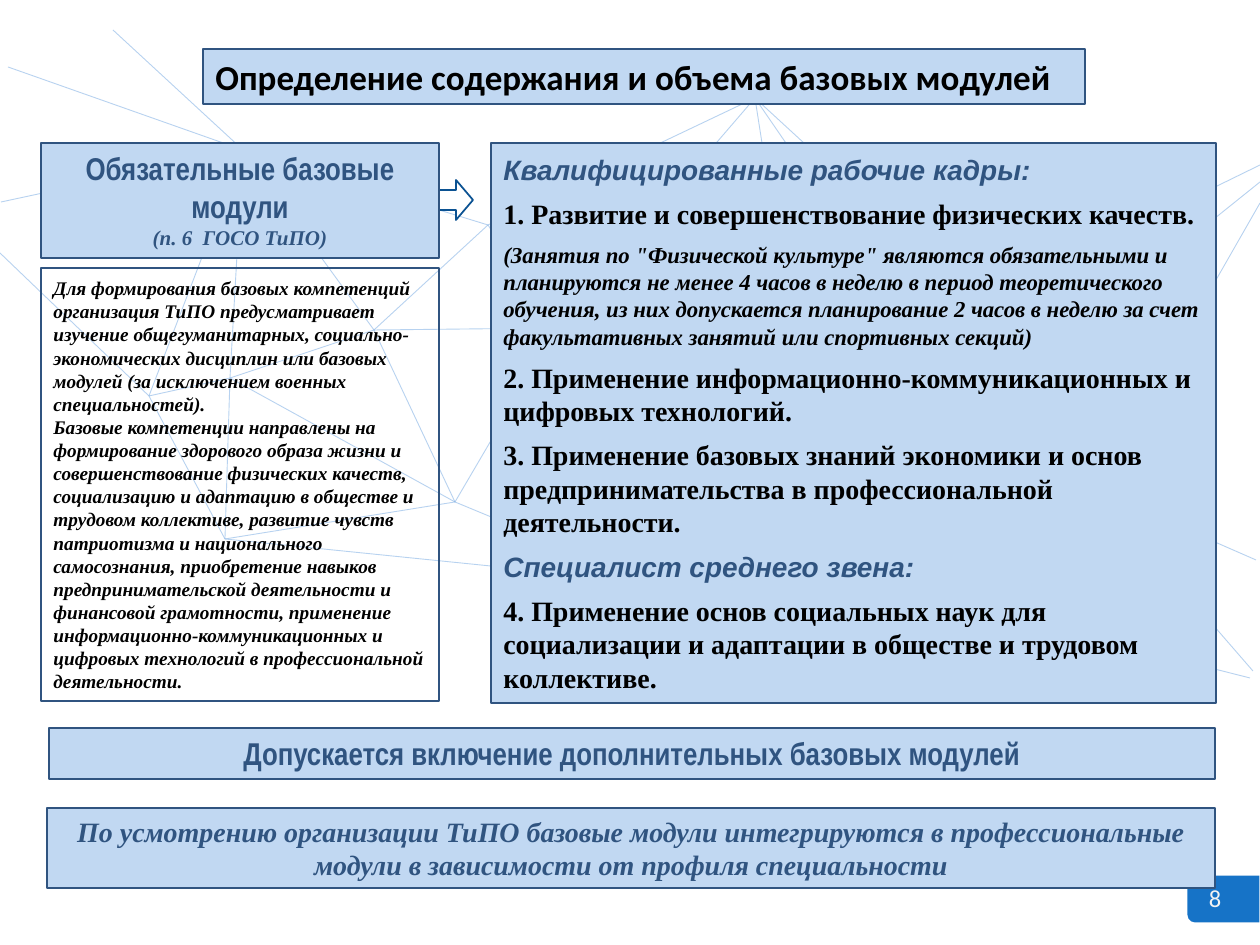
import pptx
import pptx.util
import pptx.dml.color
import pptx.enum.shapes
import pptx.enum.text
import pptx.oxml
import pptx.oxml.ns
import lxml.etree
from dataclasses import dataclass

SCALE = 914400 / 126  # EMU in one px
SHAPES = pptx.enum.shapes.MSO_SHAPE
ALIGN = pptx.enum.text.PP_ALIGN
ANCHOR = pptx.enum.text.MSO_ANCHOR


@dataclass(frozen=True)
class Theme:
    panel: str = "C1D8F2"
    navy: str = "305480"
    black: str = "000000"
    white: str = "FFFFFF"
    arrow: str = "0B5292"
    web: str = "82B1E5"
    tab: str = "0F6FC6"
    number: str = "F2F2F2"
    serif: str = "Times New Roman"
    sans: str = "Arial"
    narrow: str = "Arial Narrow"
    plain: str = "Calibri"
    title: int = 20
    heading: int = 18
    body: int = 16
    page_number: int = 14
    remark: int = 13
    note: int = 12
    detail: int = 11


THEME = Theme()

# Junctions of the background web, in px
NODES = {
    "west": (243, 150), "b": (149, 396), "c": (230, 378), "d": (374, 330),
    "e": (488, 225), "f": (455, 502), "g": (225, 539), "h": (557, 328),
    "i": (648, 582), "north": (755, 98), "k": (900, 309), "l": (978, 303),
    "m": (1123, 292), "n": (1096, 490), "o": (958, 604), "p": (780, 258),
    "left1": (113, 30), "left2": (8, 67), "left3": (1, 202), "left4": (0, 253),
    "right1": (1260, 165), "right2": (1260, 182), "right3": (1260, 203),
    "right4": (1253, 671), "right5": (1256, 560), "right6": (1250, 678),
}
LINKS = {
    "west": "left1 left2 left3 b c d e",
    "b": "left4 c g",
    "c": "d g f",
    "d": "e f h",
    "f": "g h i",
    "h": "e",
    "i": "g",
    "north": "e h k l p",
    "l": "right1",
    "m": "right2",
    "n": "right3 right4 right5",
    "o": "right6",
}


def emu(px):
    return pptx.util.Emu(round(px * SCALE))


def rgb(color):
    return pptx.dml.color.RGBColor.from_string(color)


def set_alpha(parent, percent):
    color = next(parent.iter(pptx.oxml.ns.qn("a:srgbClr")))
    alpha = lxml.etree.SubElement(color, pptx.oxml.ns.qn("a:alpha"))
    alpha.set("val", str(percent * 1000))


def add_box(page, box, fill=None, line=None, width=0.75, kind=SHAPES.RECTANGLE):
    shape = page.shapes.add_shape(kind, *map(emu, box))
    shape.shadow.inherit = False
    if fill:
        shape.fill.solid()
        shape.fill.fore_color.rgb = rgb(fill)
    else:
        shape.fill.background()
    if line:
        shape.line.color.rgb = rgb(line)
        shape.line.width = pptx.util.Pt(width)
    else:
        shape.line.fill.background()
    return shape


def write(shape, paragraphs, align=ALIGN.LEFT, anchor=ANCHOR.TOP, after=0):
    """Each paragraph is (text, size, font, color, bold, italic)."""
    frame = shape.text_frame
    frame.word_wrap = True
    frame.auto_size = pptx.enum.text.MSO_AUTO_SIZE.SHAPE_TO_FIT_TEXT
    frame.vertical_anchor = anchor
    for index, (text, size, font, color, bold, italic) in enumerate(paragraphs):
        para = frame.add_paragraph() if index else frame.paragraphs[0]
        para.alignment = align
        para.space_after = pptx.util.Pt(after)
        span = para.add_run()
        span.text = text
        span.font.size = pptx.util.Pt(size)
        span.font.name = font
        span.font.color.rgb = rgb(color)
        span.font.bold = bold
        span.font.italic = italic


def add_web(page, box):
    left, top = box[:2]
    group = page.shapes.add_group_shape()
    for start, ends in LINKS.items():
        for end in ends.split():
            (x1, y1), (x2, y2) = NODES[start], NODES[end]
            line = group.shapes.add_connector(
                pptx.enum.shapes.MSO_CONNECTOR.STRAIGHT,
                emu(left + x1), emu(top + y1), emu(left + x2), emu(top + y2))
            line.line.color.rgb = rgb(THEME.web)
            line.line.width = pptx.util.Pt(0.5)
            properties = line._element.spPr
            set_alpha(properties, 56)
            lxml.etree.SubElement(properties, pptx.oxml.ns.qn("a:effectLst"))


def add_page_number(page, box):
    left, top, width, height = box
    # The tab is upright, then turned so that its round side faces left
    inset = (width - height) // 2
    tab = add_box(page, (left + inset, top - inset, height, width), THEME.tab,
                  kind=SHAPES.ROUND_2_SAME_RECTANGLE)
    tab.rotation = 270
    set_alpha(tab._element.spPr, 97)
    label = page.shapes.add_textbox(*map(emu, (left - 5, top + 2, 64, 43)))
    write(label, [("8", THEME.page_number, THEME.plain, THEME.number, False, False)],
          ALIGN.CENTER)


def add_banner(page, box, text, size, font, color=THEME.navy, italic=False,
               align=ALIGN.CENTER):
    banner = add_box(page, box, THEME.panel, THEME.navy)
    write(banner, [(text, size, font, color, True, italic)], align)


def add_required_modules(page, box):
    left, top, width, height = box
    head_height, gap = 115, 10
    # Heading
    heading = add_box(page, (left, top, width, head_height), THEME.panel, THEME.navy)
    write(heading, [
        ("Обязательные базовые модули", THEME.heading, THEME.narrow, THEME.navy, True, False),
        ("(п. 6  ГОСО ТиПО)", THEME.note, THEME.serif, THEME.navy, True, True),
    ], ALIGN.CENTER)
    # Explanation
    offset = head_height + gap
    details = add_box(page, (left, top + offset, width, height - offset), None, THEME.navy)
    texts = [
        "Для формирования базовых компетенций организация ТиПО предусматривает изучение "
        "общегуманитарных, социально-экономических дисциплин или базовых модулей "
        "(за исключением военных специальностей).",
        "Базовые компетенции направлены на формирование здорового образа жизни и "
        "совершенствование физических качеств, социализацию и адаптацию в обществе и "
        "трудовом коллективе, развитие чувств патриотизма и национального самосознания, "
        "приобретение навыков предпринимательской деятельности и финансовой грамотности, "
        "применение информационно-коммуникационных и цифровых технологий в "
        "профессиональной деятельности.",
    ]
    write(details, [(text, THEME.detail, THEME.serif, THEME.black, True, True)
                    for text in texts], anchor=ANCHOR.MIDDLE)


def add_module_list(page, box):
    level = (THEME.body, THEME.sans, THEME.navy, True, True)
    item = (THEME.body, THEME.serif, THEME.black, True, False)
    remark = (THEME.remark, THEME.serif, THEME.black, True, True)
    panel = add_box(page, box, THEME.panel, THEME.navy)
    write(panel, [
        ("Квалифицированные рабочие кадры:", *level),
        ("1. Развитие и совершенствование физических качеств.", *item),
        ("(Занятия по \"Физической культуре\" являются обязательными и планируются не менее "
         "4 часов в неделю в период теоретического обучения, из них допускается планирование "
         "2 часов в неделю за счет факультативных занятий или спортивных секций)", *remark),
        ("2. Применение информационно-коммуникационных и цифровых технологий.", *item),
        ("3. Применение базовых знаний экономики и основ предпринимательства в "
         "профессиональной деятельности.", *item),
        ("Специалист среднего звена:", *level),
        ("4. Применение основ социальных наук для социализации и адаптации в обществе и "
         "трудовом коллективе.", *item),
    ], anchor=ANCHOR.MIDDLE, after=6)


def main():
    deck = pptx.Presentation()
    deck.slide_width, deck.slide_height = emu(1260), emu(945)
    page = deck.slides.add_slide(deck.slide_layouts[6])
    # Background
    add_web(page, (0, 0, 1260, 945))
    add_page_number(page, (1188, 875, 72, 47))
    # Modules and their content
    add_box(page, (439, 180, 34, 40), THEME.white, THEME.arrow, 1, SHAPES.RIGHT_ARROW)
    add_required_modules(page, (41, 143, 398, 558))
    add_module_list(page, (491, 143, 725, 560))
    # Banners
    add_banner(page, (49, 728, 1166, 51),
               "Допускается включение дополнительных базовых модулей",
               THEME.heading, THEME.narrow)
    add_banner(page, (203, 49, 882, 55), "Определение содержания и объема базовых модулей",
               THEME.title, THEME.plain, THEME.black, align=ALIGN.LEFT)
    add_banner(page, (47, 808, 1168, 80),
               "По усмотрению организации ТиПО базовые модули интегрируются в "
               "профессиональные модули в зависимости от профиля специальности",
               THEME.body, THEME.serif, italic=True)
    deck.save("out.pptx")


if __name__ == "__main__":
    main()
